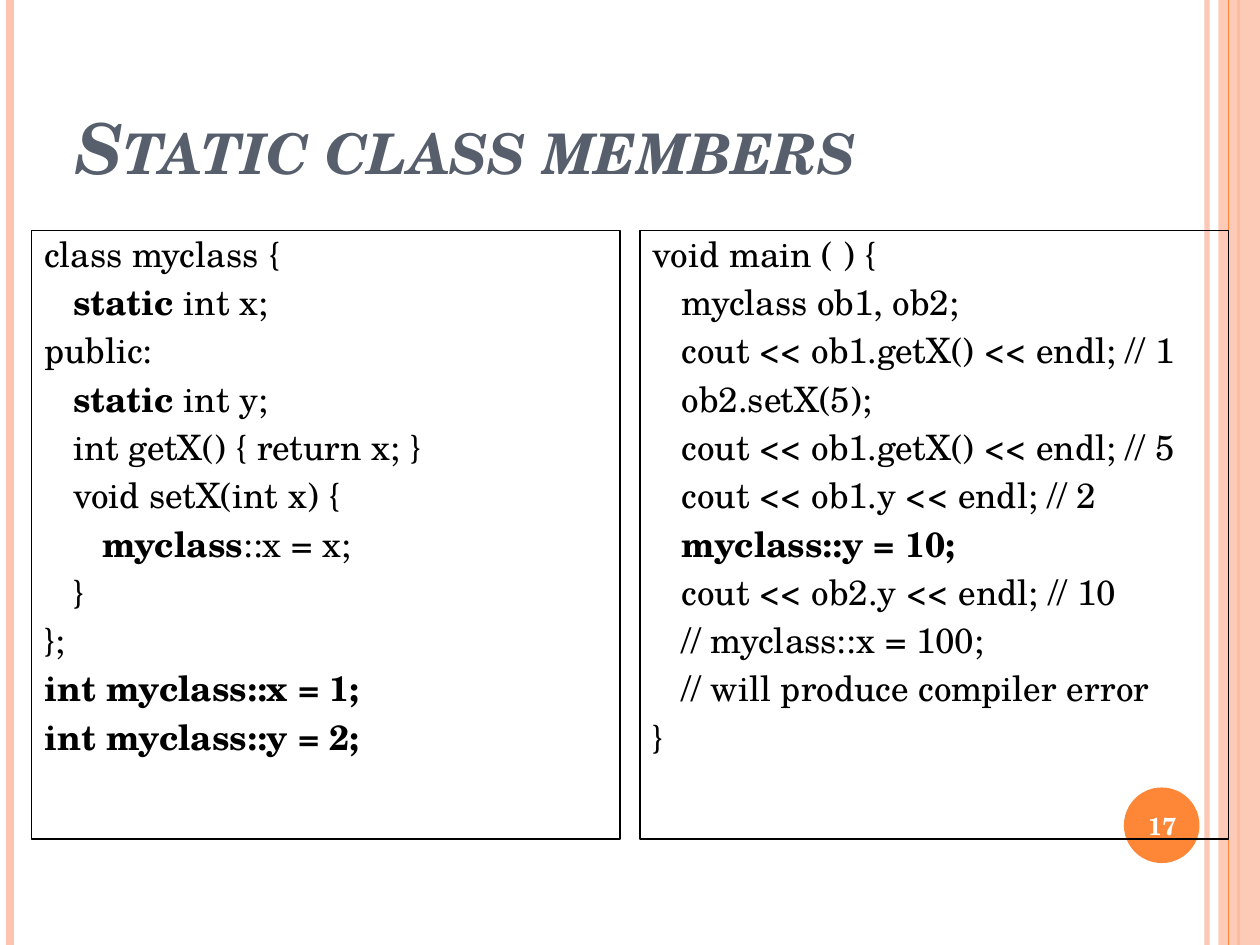
from lxml.etree import SubElement
from pptx import Presentation
from pptx.dml.color import RGBColor
from pptx.enum.shapes import MSO_CONNECTOR, MSO_SHAPE
from pptx.enum.text import MSO_ANCHOR, MSO_AUTO_SIZE, PP_ALIGN
from pptx.oxml.ns import qn
from pptx.util import Inches, Pt

TITLE = "Static class members"
PAGE_NUMBER = "17"
PANELS = [
    [
        (0, [("class myclass {", False)]),
        (1, [("static", True), (" int x;", False)]),
        (0, [("public:", False)]),
        (1, [("static", True), (" int y;", False)]),
        (1, [("int getX() { return x; }", False)]),
        (1, [("void setX(int x) {", False)]),
        (2, [("myclass", True), ("::x = x;", False)]),
        (1, [("}", False)]),
        (0, [("};", False)]),
        (0, [("int myclass::x = 1;", True)]),
        (0, [("int myclass::y = 2;", True)]),
    ],
    [
        (0, [("void main ( ) {", False)]),
        (1, [("myclass ob1, ob2;", False)]),
        (1, [("cout << ob1.getX() << endl; // 1", False)]),
        (1, [("ob2.setX(5);", False)]),
        (1, [("cout << ob1.getX() << endl; // 5", False)]),
        (1, [("cout << ob1.y << endl; // 2", False)]),
        (1, [("myclass::y = 10;", True)]),
        (1, [("cout << ob2.y << endl; // 10", False)]),
        (1, [("// myclass::x = 100;", False)]),
        (1, [("// will produce compiler error", False)]),
        (0, [("}", False)]),
    ],
]
COLORS = {"peach": "FEC3AE", "orange": "FE8637", "slate": "575F6D",
          "black": "000000", "white": "FFFFFF"}
FONT = "TeX Gyre Schola"
WIDTH, HEIGHT = 10, 7.5
BAND_LEFT = 9.67
RAILS_BEHIND = [(9.58, "peach", 3, 93), (0.08, "peach", 4.5, 100), (9.83, "orange", 1.5, 100)]
RAILS_FRONT = [(9.75, "orange", 0.75, 100)]
PANEL_LEFT, PANEL_TOP, PANEL_WIDTH, PANEL_HEIGHT, GAP = 0.25, 1.83, 4.67, 4.83, 0.16
INDENT = 0.23


def color(name):
    return RGBColor.from_string(COLORS[name])


def place(shape, left, top, width, height):
    shape.left, shape.top = Inches(left), Inches(top)
    shape.width, shape.height = Inches(width), Inches(height)


def add_span(para, text, size=20, ink="black", bold=False, italic=False, small_caps=False):
    span = para.add_run()
    span.text = text
    font = span.font
    font.name, font.size, font.bold, font.italic = FONT, Pt(size), bold, italic
    font.color.rgb = color(ink)
    if small_caps:
        font._element.set("cap", "small")


def set_opacity(shape, percent):
    for tint in shape._element.spPr.iter(qn("a:srgbClr")):
        SubElement(tint, qn("a:alpha"), val=str(percent * 1000))


def add_rails(page, rails):
    for x, ink, weight, opacity in rails:
        rail = page.shapes.add_connector(
            MSO_CONNECTOR.STRAIGHT, Inches(x), 0, Inches(x), Inches(HEIGHT))
        rail.line.color.rgb = color(ink)
        rail.line.width = Pt(weight)
        if opacity < 100:
            set_opacity(rail, opacity)
        SubElement(rail._element.spPr, qn("a:effectLst"))


def add_plain_shape(page, kind, area, ink):
    shape = page.shapes.add_shape(kind, *map(Inches, area))
    shape.shadow.inherit = False
    shape.fill.solid()
    shape.fill.fore_color.rgb = color(ink)
    shape.line.fill.background()
    return shape


def prepare_frame(shape, anchor):
    frame = shape.text_frame
    frame.word_wrap = True
    frame.auto_size = MSO_AUTO_SIZE.NONE
    frame.vertical_anchor = anchor
    return frame


def fill_panel(box, lines):
    box.line.color.rgb = color("black")
    box.line.width = Pt(0.75)
    frame = prepare_frame(box, MSO_ANCHOR.TOP)
    for number, (level, spans) in enumerate(lines):
        para = frame.add_paragraph() if number else frame.paragraphs[0]
        para.line_spacing = 0.9
        para.space_before = Pt(6)
        settings = para._element.get_or_add_pPr()
        settings.set("marL", str(Inches(INDENT * level)))
        settings.set("indent", "0")
        SubElement(settings, qn("a:buNone"))
        for text, bold in spans:
            add_span(para, text, bold=bold)


def main():
    deck = Presentation()
    deck.slide_width, deck.slide_height = Inches(WIDTH), Inches(HEIGHT)
    page = deck.slides.add_slide(deck.slide_layouts[3])
    title, *boxes = page.placeholders

    add_rails(page, RAILS_BEHIND)
    band = add_plain_shape(page, MSO_SHAPE.RECTANGLE,
                           (BAND_LEFT, 0, WIDTH - BAND_LEFT, HEIGHT), "peach")
    set_opacity(band, 87)
    add_rails(page, RAILS_FRONT)
    add_plain_shape(page, MSO_SHAPE.OVAL, (8.92, 6.25, 0.6, 0.6), "orange")

    place(title, 0.5, 0.3, 8.17, 1.25)
    heading = prepare_frame(title, MSO_ANCHOR.BOTTOM).paragraphs[0]
    heading.alignment = PP_ALIGN.LEFT
    add_span(heading, TITLE, size=40, ink="slate", bold=True, italic=True, small_caps=True)

    badge = page.shapes.add_textbox(*map(Inches, (8.89, 6.27, 0.67, 0.57)))
    number = prepare_frame(badge, MSO_ANCHOR.MIDDLE).paragraphs[0]
    number.alignment = PP_ALIGN.CENTER
    add_span(number, PAGE_NUMBER, size=14, ink="white", bold=True)

    for column, (box, lines) in enumerate(zip(boxes, PANELS)):
        place(box, PANEL_LEFT + column * (PANEL_WIDTH + GAP), PANEL_TOP,
              PANEL_WIDTH, PANEL_HEIGHT)
        fill_panel(box, lines)

    for shape in (title, badge, *boxes):
        page.shapes._spTree.append(shape._element)
    deck.save("out.pptx")


if __name__ == "__main__":
    main()
